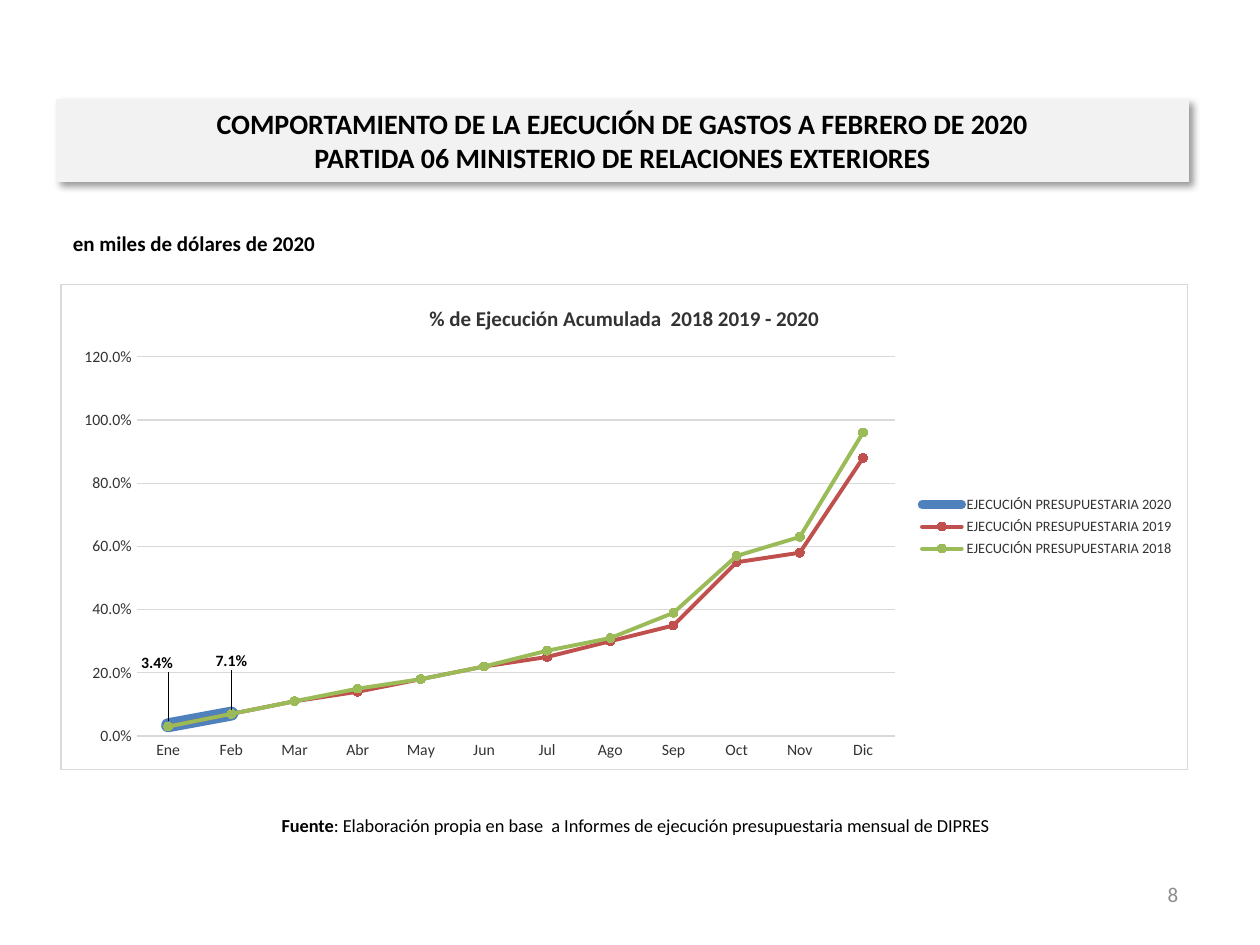
from copy import deepcopy
from dataclasses import dataclass

from lxml.etree import SubElement
from pptx import Presentation
from pptx.chart.data import CategoryChartData
from pptx.dml.color import RGBColor
from pptx.enum.chart import XL_CHART_TYPE, XL_LABEL_POSITION, XL_LEGEND_POSITION, XL_MARKER_STYLE, XL_TICK_MARK
from pptx.enum.text import MSO_ANCHOR, MSO_AUTO_SIZE, PP_ALIGN
from pptx.oxml import parse_xml
from pptx.oxml.ns import nsdecls, qn
from pptx.util import Inches, Pt


@dataclass(frozen=True)
class Theme:
    font: str = "Calibri"
    black: str = "000000"
    dark: str = "333333"
    grey: str = "8C8C8C"
    band: str = "F2F2F2"
    rule: str = "D9D9D9"
    white: str = "FFFFFF"
    title_size: float = 16
    heading_size: float = 12
    source_size: float = 10.5
    axis_size: float = 9
    legend_size: float = 8.2
    hairline: float = 0.75


THEME = Theme()
MONTHS = ["Ene", "Feb", "Mar", "Abr", "May", "Jun", "Jul", "Ago", "Sep", "Oct", "Nov", "Dic"]
EXECUTION = [
    ("2020", "4F81BD", 8, [0.034, 0.071]),
    ("2019", "C0504D", 2.25, [0.03, 0.07, 0.11, 0.14, 0.18, 0.22, 0.25, 0.3, 0.35, 0.55, 0.58, 0.88]),
    ("2018", "9BBB59", 2.25, [0.03, 0.07, 0.11, 0.15, 0.18, 0.22, 0.27, 0.31, 0.39, 0.57, 0.63, 0.96]),
]
LABEL_OFFSETS = [(-0.01, -0.09), (0, -0.07)]


def apply(target, values):
    for name, value in values.items():
        setattr(target, name, value)


def style_font(font, size, color=THEME.black, bold=False):
    apply(font, {"name": THEME.font, "size": Pt(size), "bold": bold})
    font.color.rgb = RGBColor.from_string(color)


def style_line(line, color, width=THEME.hairline):
    line.color.rgb = RGBColor.from_string(color)
    line.width = Pt(width)


def style_fill(fill, color):
    fill.solid()
    fill.fore_color.rgb = RGBColor.from_string(color)


def add_title(slide, text):
    title = slide.shapes.title
    apply(title, {"left": Inches(0.45), "top": Inches(0.79), "width": Inches(8.98), "height": Inches(0.65)})
    style_fill(title.fill, THEME.band)
    style_line(title.line, THEME.band)
    title._element.spPr.append(parse_xml(
        f'<a:effectLst {nsdecls("a")}><a:outerShdw blurRad="50800" dist="38100" dir="2700000" '
        f'algn="tl" rotWithShape="0"><a:srgbClr val="{THEME.black}"><a:alpha val="40000"/>'
        '</a:srgbClr></a:outerShdw></a:effectLst>'))
    frame = title.text_frame
    apply(frame, {"text": text, "auto_size": MSO_AUTO_SIZE.NONE, "vertical_anchor": MSO_ANCHOR.MIDDLE})
    heading = frame.paragraphs[0]
    heading.alignment = PP_ALIGN.CENTER
    for run in heading.runs:
        style_font(run.font, THEME.title_size, bold=True)
    for line_break in heading._p.findall(qn("a:br")):
        line_break.append(deepcopy(heading.runs[0]._r.rPr))


def add_text(slide, box, parts, size, color=THEME.black, align=PP_ALIGN.LEFT,
             anchor=MSO_ANCHOR.MIDDLE, wrap=True):
    frame = slide.shapes.add_textbox(*map(Inches, box)).text_frame
    apply(frame, {"word_wrap": wrap, "vertical_anchor": anchor})
    paragraph = frame.paragraphs[0]
    paragraph.alignment = align
    for text, bold in parts:
        run = paragraph.add_run()
        run.text = text
        style_font(run.font, size, color, bold)


def manual_layout(**settings):
    layout = parse_xml(f'<c:layout {nsdecls("c")}><c:manualLayout/></c:layout>')
    for name, value in settings.items():
        SubElement(layout[0], qn(f"c:{name}")).set("val", str(value))
    return layout


def place_plot_and_legend(chart):
    plot_area = chart._chartSpace.chart.plotArea
    for old_layout in plot_area.findall(qn("c:layout")):
        plot_area.remove(old_layout)
    plot_area.insert(0, manual_layout(layoutTarget="inner", xMode="edge", yMode="edge",
                                      x=0.067, y=0.15, w=0.673, h=0.782))
    legend_position = chart.legend._element.find(qn("c:legendPos"))
    legend_position.addnext(manual_layout(xMode="edge", yMode="edge", x=0.72, y=0.4, w=0.24, h=0.3))


def style_axes(chart):
    months, percent = chart.category_axis, chart.value_axis
    for axis in (months, percent):
        apply(axis, {"major_tick_mark": XL_TICK_MARK.NONE, "minor_tick_mark": XL_TICK_MARK.NONE})
        style_font(axis.tick_labels.font, THEME.axis_size, THEME.dark)
    style_line(months.format.line, THEME.rule)
    apply(percent, {"minimum_scale": 0, "maximum_scale": 1.2, "major_unit": 0.2})
    apply(percent.tick_labels, {"number_format": "0.0%", "number_format_is_linked": False})
    percent.format.line.fill.background()
    style_line(percent.major_gridlines.format.line, THEME.rule)


def style_series(series, color, width):
    series.smooth = False
    style_line(series.format.line, color, width)
    series._element.find(qn("c:spPr")).find(qn("a:ln")).set("cap", "rnd")
    apply(series.marker, {"style": XL_MARKER_STYLE.CIRCLE, "size": 5})
    style_fill(series.marker.format.fill, color)
    style_line(series.marker.format.line, color)


def label_current_year(series):
    labels = series.data_labels
    apply(labels, {"show_value": True, "number_format": "0.0%", "number_format_is_linked": False})
    style_font(labels.font, THEME.axis_size, bold=True)
    for index, (x, y) in enumerate(LABEL_OFFSETS):
        label = series.points[index].data_label
        style_font(label.font, THEME.axis_size, bold=True)
        label.position = XL_LABEL_POSITION.ABOVE
        label_element = labels._element.findall(qn("c:dLbl"))[index]
        label_element.find(qn("c:idx")).addnext(manual_layout(x=x, y=y))


def add_execution_chart(slide):
    data = CategoryChartData(number_format="0.0%")
    data.categories = MONTHS
    for year, _, _, values in EXECUTION:
        data.add_series(f"EJECUCIÓN PRESUPUESTARIA {year}", values)
    chart = slide.shapes.add_chart(XL_CHART_TYPE.LINE_MARKERS, Inches(0.48), Inches(2.25),
                                   Inches(8.95), Inches(3.86), data).chart
    style_font(chart.font, 10)
    chart._chartSpace.chart.addnext(parse_xml(
        f'<c:spPr {nsdecls("c", "a")}><a:solidFill><a:srgbClr val="{THEME.white}"/></a:solidFill>'
        f'<a:ln w="{Pt(THEME.hairline)}"><a:solidFill><a:srgbClr val="{THEME.rule}"/>'
        '</a:solidFill></a:ln></c:spPr>'))
    apply(chart, {"has_title": True, "has_legend": True})
    chart_title = chart.chart_title.text_frame
    chart_title.text = "% de Ejecución Acumulada  2018 2019 - 2020"
    style_font(chart_title.paragraphs[0].runs[0].font, THEME.heading_size, THEME.dark, True)
    apply(chart.legend, {"position": XL_LEGEND_POSITION.RIGHT, "include_in_layout": False})
    style_font(chart.legend.font, THEME.legend_size, THEME.dark)
    chart.plots[0].vary_by_categories = False
    style_axes(chart)
    for series, (_, color, width, _) in zip(chart.plots[0].series, EXECUTION):
        style_series(series, color, width)
    label_current_year(chart.plots[0].series[0])
    place_plot_and_legend(chart)


def main():
    deck = Presentation()
    apply(deck, {"slide_width": Inches(10), "slide_height": Inches(7.5)})
    slide = deck.slides.add_slide(deck.slide_layouts[5])
    add_title(slide, "COMPORTAMIENTO DE LA EJECUCIÓN DE GASTOS A FEBRERO DE 2020\v"
                     "PARTIDA 06 MINISTERIO DE RELACIONES EXTERIORES")
    add_text(slide, (0.48, 1.78, 2.15, 0.3), [("en miles de dólares de 2020", True)],
             THEME.heading_size, anchor=MSO_ANCHOR.TOP, wrap=False)
    add_execution_chart(slide)
    add_text(slide, (0.45, 6.35, 9.19, 0.4),
             [("Fuente", True),
              (": Elaboración propia en base  a Informes de ejecución presupuestaria mensual de DIPRES", False)],
             THEME.source_size, align=PP_ALIGN.CENTER)
    add_text(slide, (7.12, 6.9, 2.33, 0.4), [("8", False)], THEME.heading_size, THEME.grey, PP_ALIGN.RIGHT)
    deck.save("out.pptx")


if __name__ == "__main__":
    main()
